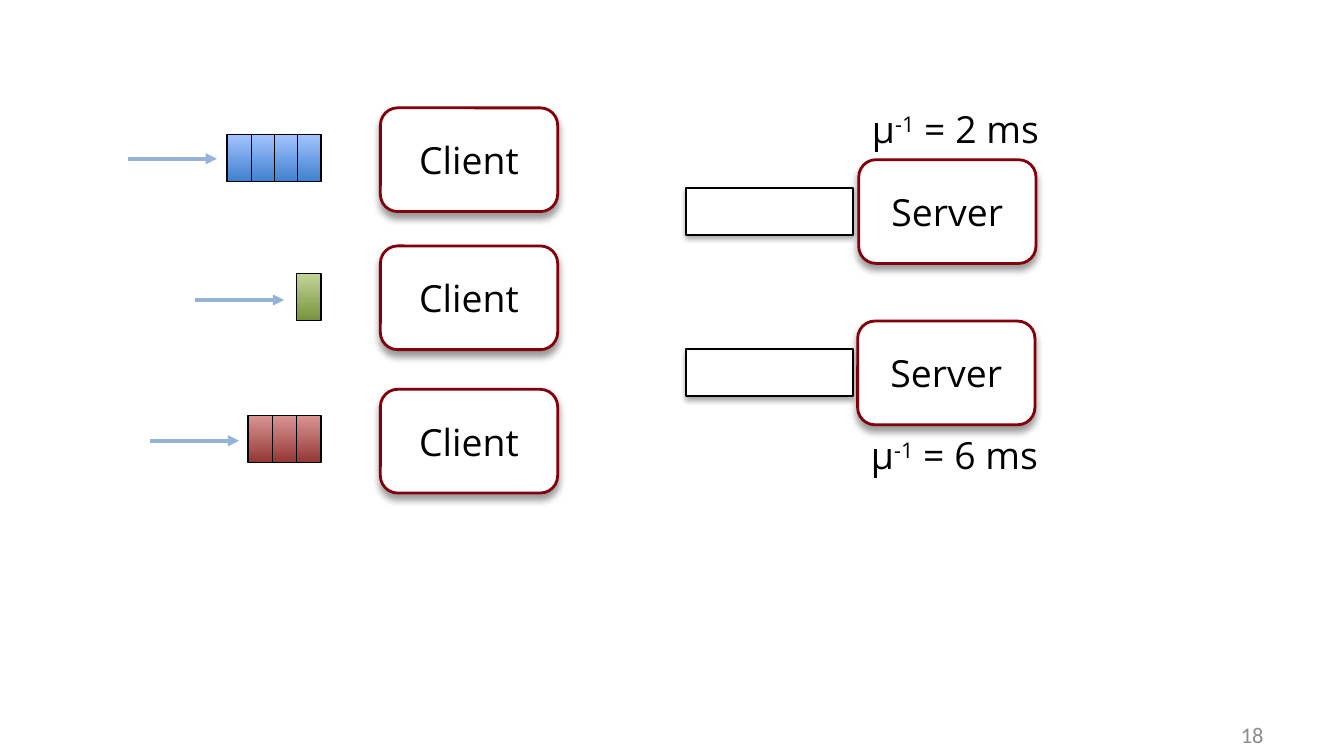
"""Build the slide of client queues feeding two servers."""
from dataclasses import dataclass

from lxml import etree
from pptx import Presentation
from pptx.dml.color import RGBColor
from pptx.enum.shapes import MSO_CONNECTOR, MSO_SHAPE
from pptx.enum.text import MSO_ANCHOR, PP_ALIGN
from pptx.oxml.ns import qn
from pptx.util import Cm, Pt

STRAIGHT = MSO_CONNECTOR.STRAIGHT
RECTANGLE, ROUNDED = MSO_SHAPE.RECTANGLE, MSO_SHAPE.ROUNDED_RECTANGLE
TOP, MIDDLE = MSO_ANCHOR.TOP, MSO_ANCHOR.MIDDLE
LEFT, CENTER, RIGHT = PP_ALIGN.LEFT, PP_ALIGN.CENTER, PP_ALIGN.RIGHT
BLANK_LAYOUT = 6


@dataclass(frozen=True)
class Theme:
    """Colours, fonts and sizes of the slide."""
    ink: str = "000000"
    paper: str = "FFFFFF"
    border: str = "82000B"
    arrow: str = "95B3D7"
    muted: str = "8C8C8C"
    blue: tuple = ("3F80CE", "A4C4FF")
    green: tuple = ("77933C", "C3D69B")
    red: tuple = ("953735", "D99694")
    body_font: str = "Open Sans"
    number_font: str = "Calibri"
    body_size: int = 20
    number_size: int = 12
    node_shadow: tuple = (40, 4, 3)
    buffer_shadow: tuple = (35, 3.1, 1.8)


class SlideBuilder:
    """Draw each kind of element on one slide in one theme."""

    def __init__(self, slide, theme):
        self.slide = slide
        self.theme = theme

    def fill_text(self, shape, parts, anchor=MIDDLE, alignment=CENTER, **changes):
        """Put (text, baseline) parts into a shape as one paragraph."""
        theme = self.theme
        values = {"name": theme.body_font, "size": theme.body_size, "color": theme.ink} | changes
        color = RGBColor.from_string(values.pop("color"))
        values["size"] = Pt(values["size"])
        frame = shape.text_frame
        frame.word_wrap = True
        frame.vertical_anchor = anchor
        paragraph = frame.paragraphs[0]
        paragraph.alignment = alignment
        for text, baseline in parts:
            run = paragraph.add_run()
            run.text = text
            for name, value in values.items():
                setattr(run.font, name, value)
            run.font.color.rgb = color
            if baseline:
                run._r.get_or_add_rPr().set("baseline", str(baseline * 1000))

    def label(self, box, parts, **format_values):
        """Add a text box."""
        shape = self.slide.shapes.add_textbox(*map(Cm, box))
        self.fill_text(shape, parts, **format_values)

    def outline(self, kind, box, color, width):
        """Add a preset shape with a plain outline and no shadow."""
        shape = self.slide.shapes.add_shape(kind, *map(Cm, box))
        shape.shadow.inherit = False
        shape.line.color.rgb = RGBColor.from_string(color)
        shape.line.width = Pt(width)
        return shape

    def panel(self, kind, box, color, width, shadow):
        """Add a white shape with a shadow below it."""
        shape = self.outline(kind, box, color, width)
        shape.fill.solid()
        shape.fill.fore_color.rgb = RGBColor.from_string(self.theme.paper)
        opacity, blur, distance = shadow
        effects = shape._element.spPr.find(qn("a:effectLst"))
        outer = etree.SubElement(effects, qn("a:outerShdw"), blurRad=str(Pt(blur)),
                                 dist=str(Pt(distance)), dir="5400000", rotWithShape="0")
        color_element = etree.SubElement(outer, qn("a:srgbClr"), val=self.theme.ink)
        etree.SubElement(color_element, qn("a:alpha"), val=str(opacity * 1000))
        return shape

    def node(self, left, top, name):
        """Add a named client or server."""
        shape = self.panel(ROUNDED, (left, top, 3.35, 1.96), self.theme.border, 1.5,
                           self.theme.node_shadow)
        self.fill_text(shape, [(name, 0)])

    def buffer(self, left, top):
        """Add the empty buffer of a server."""
        self.panel(RECTANGLE, (left, top, 3.15, 0.89), self.theme.ink, 1,
                   self.theme.buffer_shadow)

    def queue(self, right_cell, top, count, pitch, colors):
        """Add queued requests from right to left."""
        for index in range(count):
            box = (right_cell - index * pitch, top, 0.46, 0.89)
            fill = self.outline(RECTANGLE, box, self.theme.ink, 0.75).fill
            fill.gradient()
            fill.gradient_angle = 90
            for stop, color in zip(fill.gradient_stops, colors):
                stop.color.rgb = RGBColor.from_string(color)

    def arrow(self, left, y):
        """Add an arrow that points right."""
        connector = self.slide.shapes.add_connector(
            STRAIGHT, *map(Cm, (left, y, left + 1.69, y)))
        connector.line.color.rgb = RGBColor.from_string(self.theme.arrow)
        connector.line.width = Pt(2)
        properties = connector._element.spPr
        etree.SubElement(properties.find(qn("a:ln")), qn("a:tailEnd"), type="triangle")
        etree.SubElement(properties, qn("a:effectLst"))


def main():
    """Build and save the slide."""
    presentation = Presentation()
    presentation.slide_width, presentation.slide_height = Cm(25.4), Cm(14.29)
    slide = presentation.slides.add_slide(presentation.slide_layouts[BLANK_LAYOUT])
    theme = Theme()
    builder = SlideBuilder(slide, theme)

    builder.label((18.21, 13.51, 5.92, 0.76), [("18", 0)], alignment=RIGHT,
                  name=theme.number_font, size=theme.number_size, color=theme.muted)

    clients = (
        (2.04, 2.54, 4, 0.44, theme.blue, 2.41, 3.0),
        (4.65, 5.17, 1, 0.46, theme.green, 3.68, 5.67),
        (7.36, 7.85, 3, 0.46, theme.red, 2.83, 8.33),
    )
    for top, queue_top, count, pitch, colors, arrow_left, arrow_y in clients:
        builder.node(7.19, top, "Client")
        builder.queue(5.61, queue_top, count, pitch, colors)
        builder.arrow(arrow_left, arrow_y)

    servers = ((16.23, 3.02, 1.88, " = 2 ms"), (16.21, 6.07, 8.05, " = 6 ms"))
    for left, top, label_top, duration in servers:
        builder.node(left, top, "Server")
        builder.buffer(12.97, top + 0.53)
        builder.label((left, label_top, 3.78, 1.12), [("µ", 0), ("-1", 30), (duration, 0)],
                      anchor=TOP, alignment=LEFT)

    presentation.save("out.pptx")


if __name__ == "__main__":
    main()
